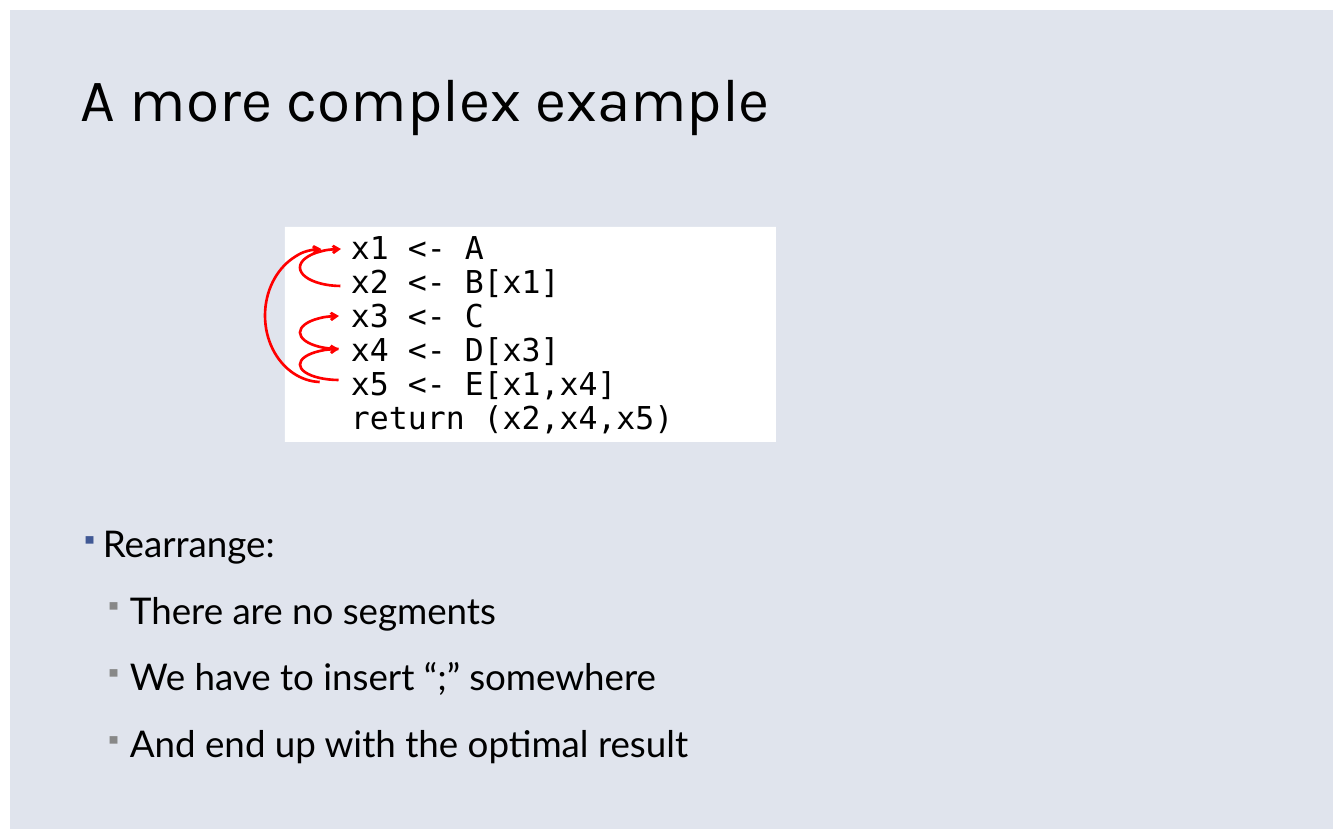
from pptx import Presentation
from pptx.dml.color import RGBColor
from pptx.enum.shapes import MSO_SHAPE
from pptx.enum.text import MSO_ANCHOR, PP_ALIGN
from pptx.oxml import parse_xml
from pptx.oxml.ns import nsdecls
from pptx.util import Emu, Pt

PX = 9676  # EMU in one px
COLOURS = {
    "background": "E0E4ED",
    "white": "FFFFFF",
    "text": "000000",
    "bullet": "415995",
    "sub_bullet": "888888",
    "arrow": "FF0000",
}


def colour(name):
    return RGBColor.from_string(COLOURS[name])


def write(para, text, font, size, line_spacing):
    para.alignment = PP_ALIGN.LEFT
    para.line_spacing = line_spacing
    span = para.add_run()
    span.text = text
    span.font.name = font
    span.font.size = Pt(size)
    span.font.color.rgb = colour("text")


deck = Presentation()
deck.slide_width, deck.slide_height = Emu(1344 * PX), Emu(840 * PX)
page = deck.slides.add_slide(deck.slide_layouts[5])
page.background.fill.solid()
page.background.fill.fore_color.rgb = colour("background")

# White border around the page
border = page.shapes.add_shape(MSO_SHAPE.RECTANGLE, 0, 0, deck.slide_width, deck.slide_height)
border.shadow.inherit = False
border.fill.background()
border.line.color.rgb = colour("white")
border.line.width = Pt(16)

# Title
title = page.shapes.title
title.left, title.top, title.width, title.height = [Emu(n * PX) for n in (81, 67, 1180, 68)]
frame = title.text_frame
frame.margin_left = frame.margin_top = frame.margin_right = frame.margin_bottom = 0
frame.vertical_anchor = MSO_ANCHOR.BOTTOM
write(frame.paragraphs[0], "A more complex example", "Karla", 46, 0.9)

# Bulleted text: text, level, space before
points = [
    ("Rearrange:", 0, 0),
    ("There are no segments", 1, 14),
    ("We have to insert “;” somewhere", 1, 14),
    ("And end up with the optimal result", 1, 14),
]
levels = [(22, 22, "bullet"), (49, 25, "sub_bullet")]  # indent, hang, bullet colour
body = page.shapes.add_textbox(*[Emu(n * PX) for n in (81, 516, 1180, 265)])
frame = body.text_frame
frame.word_wrap = True
frame.margin_left = frame.margin_top = frame.margin_right = frame.margin_bottom = 0
for index, (text, level, space) in enumerate(points):
    para = frame.paragraphs[0] if index == 0 else frame.add_paragraph()
    write(para, text, "Lato", 28, 1.1)
    para.level = level
    para.space_before = Pt(space)
    indent, hang, bullet_colour = levels[level]
    properties = para._p.get_or_add_pPr()
    properties.set("marL", str(indent * PX))
    properties.set("indent", str(-hang * PX))
    for bullet in (
        f'<a:buClr {nsdecls("a")}><a:srgbClr val="{COLOURS[bullet_colour]}"/></a:buClr>',
        f'<a:buSzPct {nsdecls("a")} val="64000"/>',
        f'<a:buChar {nsdecls("a")} char="▪"/>',
    ):
        properties.append(parse_xml(bullet))

# Code panel
code_lines = [
    "x1 <- A",
    "x2 <- B[x1]",
    "x3 <- C",
    "x4 <- D[x3]",
    "x5 <- E[x1,x4]",
    "return (x2,x4,x5)",
]
panel = page.shapes.add_shape(MSO_SHAPE.RECTANGLE, *[Emu(n * PX) for n in (285, 227, 491, 215)])
panel.shadow.inherit = False
panel.fill.solid()
panel.fill.fore_color.rgb = colour("white")
panel.line.fill.background()
frame = panel.text_frame
frame.word_wrap = True
frame.vertical_anchor = MSO_ANCHOR.TOP
frame.margin_left = Emu(66 * PX)
frame.margin_top = frame.margin_bottom = Emu(5 * PX)
for index, text in enumerate(code_lines):
    para = frame.paragraphs[0] if index == 0 else frame.add_paragraph()
    write(para, text, "DejaVu Sans Mono", 24, 0.9)

# Dependency arrows: left half of each ellipse, pointing at its top
dependencies = [
    (300, 249, 82, 37),
    (300, 316, 78, 33),
    (300, 349, 78, 31),
    (265, 249, 113, 133),
]
for bounds in dependencies:
    arc = page.shapes.add_shape(MSO_SHAPE.ARC, *[Emu(n * PX) for n in bounds])
    arc.shadow.inherit = False
    arc.adjustments[0] = 162  # 270 degrees
    arc.adjustments[1] = 53.08  # just short of 90 degrees
    arc.element.spPr.xfrm.set("flipH", "1")
    arc.fill.background()
    arc.line.color.rgb = colour("arrow")
    arc.line.width = Pt(2)
    arc.line._get_or_add_ln().append(parse_xml(f'<a:headEnd {nsdecls("a")} type="arrow"/>'))

deck.save("out.pptx")
